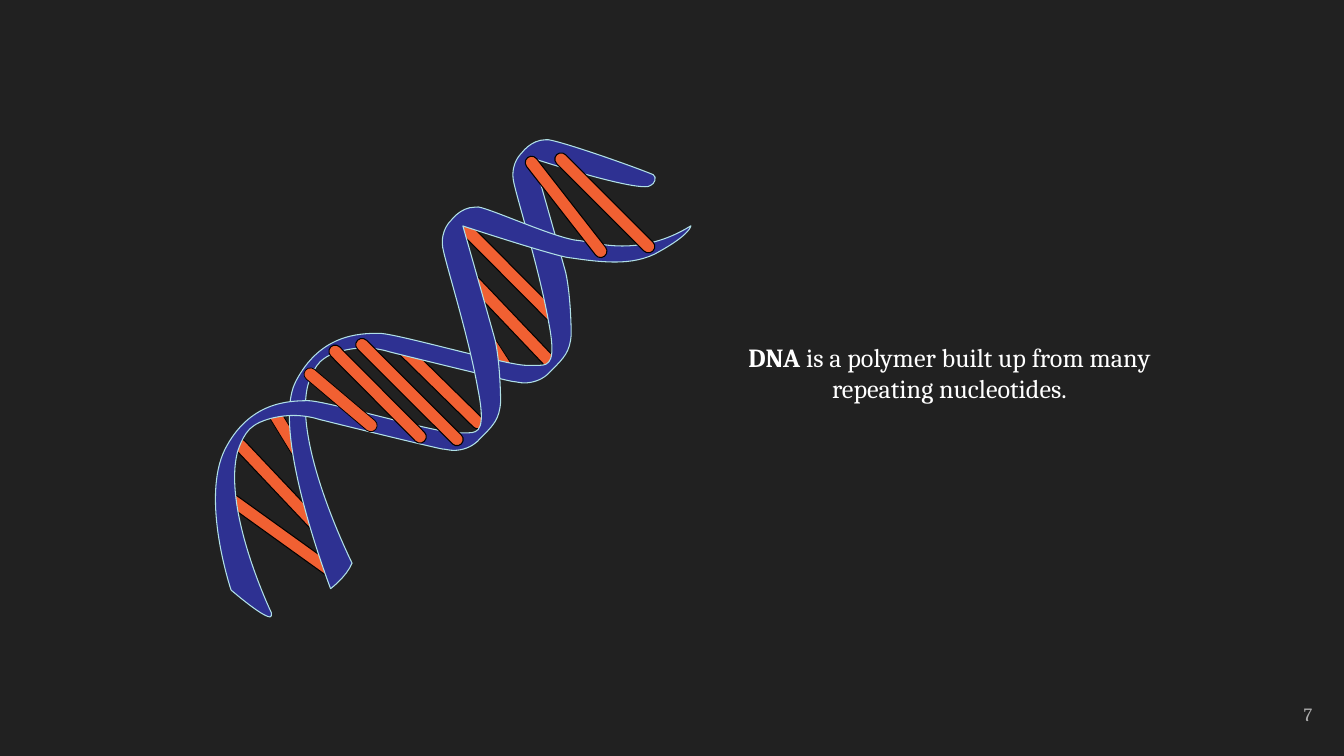
"""Build a slide with a DNA double helix and a one-sentence caption."""
from math import atan2, cos, pi, sin, tan

from pptx import Presentation
from pptx.dml.color import RGBColor
from pptx.enum.text import MSO_ANCHOR, PP_ALIGN
from pptx.oxml.ns import qn
from pptx.util import Pt

FONT = "Cambria"
BACKGROUND, WHITE, GREY = "212121", "FFFFFF", "ADADAD"
RUNG_FILL, RUNG_LINE = "F16032", "010101"
STRAND_FILL, STRAND_LINE = "2E3192", "B0E0E6"

RUNG_RADIUS = 3.4
CAP_ARCS = 3
WIDE_LINE, THIN_LINE = 0.57, 0.43

CAPTION = [("DNA ", True), ("is a polymer built up from many repeating nucleotides.", False)]
PAGE_NUMBER = [("7", False)]

BACK_RUNGS = [
    ((125.3, 268.6), (178.9, 307.1), WIDE_LINE),
    ((128.5, 238.3), (171.4, 283.7), WIDE_LINE),
    ((249.8, 122.8), (296.3, 169.6), WIDE_LINE),
    ((250.2, 147.2), (294.1, 193.3), WIDE_LINE),
    ((248.4, 161.6), (271.4, 197.3), THIN_LINE),
    ((213.5, 184.7), (256, 226.4), WIDE_LINE),
    ((146.9, 221.4), (166.3, 253.1), THIN_LINE),
]
FRONT_RUNGS = [
    ((179.6, 188.3), (225, 234), WIDE_LINE),
    ((194, 184.7), (244.8, 235.4), WIDE_LINE),
    ((166.3, 200.5), (198.7, 227.9), THIN_LINE),
    ((300.6, 85.3), (347.4, 132.1), WIDE_LINE),
    ((284.8, 87.1), (321.8, 134.6), WIDE_LINE),
]

STRAND_START = (292.3, 74.9)
OUTER_EDGE = [
    ((284.4, 74.9), (279.4, 82.1), (279.4, 82.1)),
    ((279.4, 82.1), (273.6, 87.1), (275, 96.5)),
    ((276.5, 105.1), (288.7, 143.3), (293.8, 172.1)),
    ((298.1, 193.7), (294.5, 195.8), (288.7, 195.8)),
    ((286.6, 195.8), (284.4, 195.8), (282.2, 195.8)),
    ((271.4, 195.8), (212.4, 178.6), (203, 178.6)),
    ((192.2, 178.6), (171.4, 179.3), (158.4, 204.5)),
]
INNER_EDGE = [
    ((164.9, 206.6), (167.8, 195.8), (173.5, 192.2)),
    ((177.1, 189.4), (185.8, 186.5), (195.1, 186.5)),
    ((199.4, 186.5), (204.5, 187.2), (208.8, 188.6)),
    ((223.2, 192.2), (270.7, 203.8), (275, 204.5)),
    ((276.5, 204.5), (278.6, 205.2), (280.8, 205.2)),
    ((285.1, 205.2), (290.9, 203.8), (295.2, 198.7)),
    ((302.4, 191.5), (305.3, 188.6), (306, 179.3)),
    ((306, 179.3), (306, 159.8), (303.1, 146.2)),
    ((299.5, 133.2), (285.8, 85), (285.8, 85)),
]
STRANDS = [
    {
        "shift": (0, 0),
        "foot": [
            ((144.7, 231.1), (177.1, 315.4), (177.1, 315.4)),
            ((177.1, 315.4), (185.8, 308.9), (188.6, 301.7)),
            ((188.6, 301.7), (157, 238.3), (164.9, 206.6)),
        ],
        "tip": [
            ((285.8, 85), (331.9, 100.1), (345.6, 100.1)),
            ((346.3, 100.1), (347.8, 100.1), (348.5, 99.4)),
            ((350.6, 98.6), (352.1, 95), (349.9, 93.6)),
            ((337.7, 88.6), (302.4, 76.3), (293.8, 74.9)),
        ],
    },
    {
        "shift": (-37.8, 36.1),
        "foot": [
            ((107.3, 267.1), (123.8, 316.1), (123.8, 316.1)),
            ((123.8, 316.1), (140.4, 330.5), (144.7, 330.5)),
            ((145.4, 330.5), (145.4, 329.8), (145.4, 328.3)),
            ((145.4, 328.3), (119.5, 274.3), (127.1, 242.7)),
        ],
        "tip": [
            ((248, 121.1), (300.2, 138.2), (306, 138.2)),
            ((311.8, 139), (320.4, 140.4), (329.8, 140.4)),
            ((337.7, 140.4), (346.3, 139), (353.5, 134.6)),
            ((370.1, 125.3), (370.1, 121), (370.1, 121)),
            ((356.4, 129.6), (343.4, 131.8), (333.4, 131.8)),
            ((323.3, 131.8), (316.1, 129.6), (310.3, 128.9)),
            ((298.8, 128.2), (264.2, 112.3), (256.3, 110.9)),
        ],
    },
]


def color(value):
    return RGBColor.from_string(value)


def add_outline(group, start, segments, fill, line, line_width):
    """Draw segments of one point as lines and of three points as curves."""
    builder = group.shapes.build_freeform(Pt(start[0]), Pt(start[1]), scale=1.0)
    builder.add_line_segments(
        [(Pt(x), Pt(y)) for segment in segments for x, y in segment], close=True
    )
    shape = builder.convert_to_shape()
    steps = iter(list(shape.element.iter(qn("a:lnTo"))))
    for segment in segments:
        step = next(steps)
        if len(segment) == 3:
            step.tag = qn("a:cubicBezTo")
            for extra in (next(steps), next(steps)):
                step.append(extra[0])
                extra.getparent().remove(extra)
    shape.shadow.inherit = False
    shape.fill.solid()
    shape.fill.fore_color.rgb = color(fill)
    shape.line.color.rgb = color(line)
    shape.line.width = Pt(line_width)


def cap_curves(center, first_angle):
    """Return the half circle around a rung end as curves."""
    arc = pi / CAP_ARCS
    reach = 4 / 3 * tan(arc / 4)

    def point(angle, tangent):
        return (center[0] + RUNG_RADIUS * (cos(angle) - tangent * sin(angle)),
                center[1] + RUNG_RADIUS * (sin(angle) + tangent * cos(angle)))

    angles = [first_angle + arc * index for index in range(CAP_ARCS)]
    return [(point(angle, reach), point(angle + arc, -reach), point(angle + arc, 0))
            for angle in angles]


def add_rung(group, start, end, line_width):
    angle = atan2(end[1] - start[1], end[0] - start[0])
    side = (RUNG_RADIUS * sin(angle), -RUNG_RADIUS * cos(angle))
    corner = (start[0] + side[0], start[1] + side[1])
    far_corner = (end[0] - side[0], end[1] - side[1])
    far_cap = cap_curves(end, angle - pi / 2)
    near_cap = cap_curves(start, angle + pi / 2)
    near_corner = (start[0] - side[0], start[1] - side[1])
    opposite = (end[0] + side[0], end[1] + side[1])
    segments = [(opposite,)] + far_cap[:-1] + [far_cap[-1][:2] + (far_corner,)]
    segments += [(near_corner,)] + near_cap
    add_outline(group, corner, segments, RUNG_FILL, RUNG_LINE, line_width)


def move(curves, shift):
    return [tuple((x + shift[0], y + shift[1]) for x, y in curve) for curve in curves]


def add_strand(group, shift, foot, tip):
    start = (STRAND_START[0] + shift[0], STRAND_START[1] + shift[1])
    curves = move(OUTER_EDGE, shift) + foot + move(INNER_EDGE, shift) + tip
    add_outline(group, start, curves, STRAND_FILL, STRAND_LINE, WIDE_LINE)


def add_text(slide, box, parts, size, text_color, alignment, anchor):
    text_frame = slide.shapes.add_textbox(*map(Pt, box)).text_frame
    text_frame.word_wrap = True
    text_frame.vertical_anchor = anchor
    text_frame.margin_left = text_frame.margin_right = Pt(7.2)
    text_frame.margin_top = text_frame.margin_bottom = Pt(7.2)
    paragraph = text_frame.paragraphs[0]
    paragraph.alignment = alignment
    for text, bold in parts:
        run = paragraph.add_run()
        run.text = text
        run.font.name = FONT
        run.font.size = Pt(size)
        run.font.bold = bold
        run.font.color.rgb = color(text_color)


def main():
    presentation = Presentation()
    presentation.slide_width, presentation.slide_height = Pt(720), Pt(405)
    slide = presentation.slides.add_slide(presentation.slide_layouts[6])
    slide.background.fill.solid()
    slide.background.fill.fore_color.rgb = color(BACKGROUND)
    add_text(slide, (667, 367.2, 43.2, 31), PAGE_NUMBER, 10, GREY,
             PP_ALIGN.RIGHT, MSO_ANCHOR.MIDDLE)
    add_text(slide, (384.5, 175.7, 248.4, 54), CAPTION, 14, WHITE,
             PP_ALIGN.CENTER, MSO_ANCHOR.TOP)
    helix = slide.shapes.add_group_shape()
    for rung in BACK_RUNGS:
        add_rung(helix, *rung)
    for strand in STRANDS:
        add_strand(helix, **strand)
    for rung in FRONT_RUNGS:
        add_rung(helix, *rung)
    presentation.save("out.pptx")


if __name__ == "__main__":
    main()
